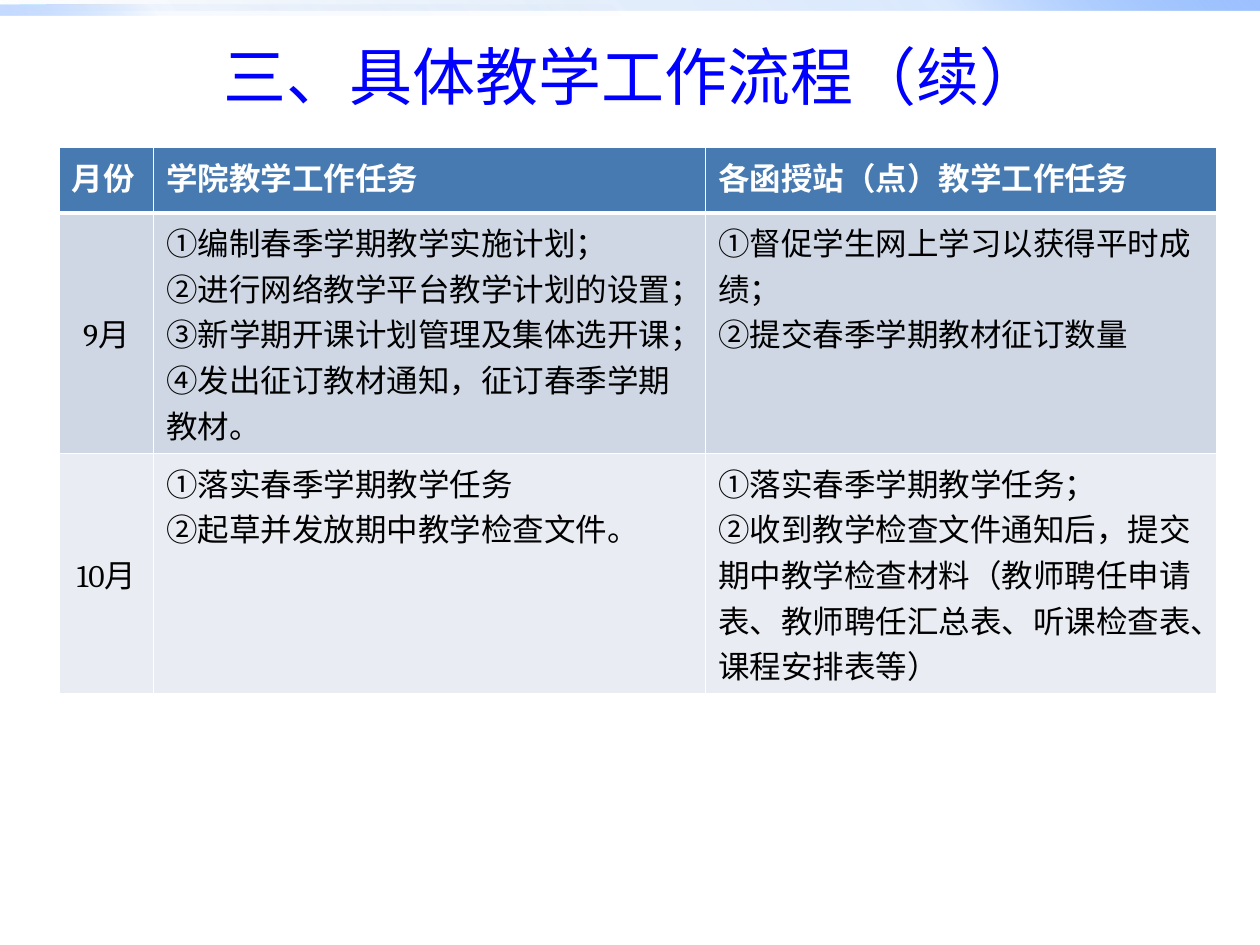
from dataclasses import dataclass

from lxml import etree
from pptx import Presentation, util as u
from pptx.dml.color import RGBColor
from pptx.enum import shapes, text
from pptx.oxml import ns


@dataclass(frozen=True)
class Theme:
    """Colours, fonts and sizes of the slide."""
    title: str = "0000FF"
    header: str = "477AB1"
    bands: tuple = ("CFD7E4", "E9ECF2")
    white: str = "FFFFFF"
    black: str = "000000"
    glow: tuple = ("0058B7", "4F95FF", "9EC2FF")
    sans: str = "Noto Sans CJK SC"
    serif: str = "Cambria"
    title_size: int = 36
    body_size: int = 18
    rule: int = 1
    header_rule: int = 3


THEME = Theme()
SANS, SERIF = THEME.sans, THEME.serif

HEADERS = ["月份", "学院教学工作任务", "各函授站（点）教学工作任务"]
MONTHS = [
    ("9月",
     [[(SANS, "①编制春季学期教学实施计划；")],
      [(SANS, "②进行网络教学平台教学计划的设置；")],
      [(SANS, "③新学期开课计划管理及集体选开课；")],
      [(SERIF, "④发出征订教材通知，征订春季学期教材。")]],
     [[(SANS, "①"), (SERIF, "督促学生网上学习以获得平时成绩"), (SANS, "；")],
      [(SANS, "②提交春季学期教材征订数量")]]),
    ("10月",
     [[(SANS, "①落实春季学期教学任务")],
      [(SANS, "②起草并发放期中教学检查文件。")]],
     [[(SANS, "①"), (SERIF, "落实春季学期教学任务；")],
      [(SANS, "②收到教学检查文件通知后，"),
       (SERIF, "提交期中教学检查材料（教师聘任申请表、教师聘任汇总表、"
               "听课检查表、课程安排表等）")]]),
]


def add_span(para, words, font, size, color, bold=False):
    """Add one formatted run to a paragraph."""
    span = para.add_run()
    span.text = words
    span.font.name = font
    span.font.size = u.Pt(size)
    span.font.bold = bold
    span.font.color.rgb = RGBColor.from_string(color)
    east = etree.SubElement(span.font._element, ns.qn("a:ea"))
    east.set("typeface", THEME.sans)


def add_bar(page, box, angle, alphas):
    """Draw a gradient strip whose stops have the given opacities in percent."""
    bar = page.shapes.add_shape(shapes.MSO_SHAPE.RECTANGLE, *map(u.Inches, box))
    bar.shadow.inherit = False
    bar.line.fill.background()
    bar.fill.gradient()
    gradient = bar.fill._xPr.find(ns.qn("a:gradFill"))
    stops = gradient.find(ns.qn("a:gsLst"))
    for stop in list(stops):
        stops.remove(stop)
    for place, color, alpha in zip((0, 75, 100), THEME.glow, alphas):
        stop = etree.SubElement(stops, ns.qn("a:gs"), pos=str(place * 1000))
        tint = etree.SubElement(stop, ns.qn("a:srgbClr"), val=color)
        etree.SubElement(tint, ns.qn("a:alpha"), val=str(alpha * 1000))
    gradient.find(ns.qn("a:lin")).set("ang", str(angle * 60000))


def place_title(page, box, words):
    """Move and format the title placeholder."""
    title = page.shapes.title
    title.left, title.top, title.width, title.height = map(u.Inches, box)
    title.text_frame.vertical_anchor = text.MSO_ANCHOR.MIDDLE
    para = title.text_frame.paragraphs[0]
    para.alignment = text.PP_ALIGN.CENTER
    add_span(para, words, THEME.sans, THEME.title_size, THEME.title)


def set_borders(cell, top, bottom):
    """Give a cell white borders of the given top and bottom widths."""
    properties = cell._tc.get_or_add_tcPr()
    widths = (("L", THEME.rule), ("R", THEME.rule), ("T", top), ("B", bottom))
    for index, (side, width) in enumerate(widths):
        line = etree.Element(ns.qn(f"a:ln{side}"), w=str(u.Pt(width)))
        fill = etree.SubElement(line, ns.qn("a:solidFill"))
        etree.SubElement(fill, ns.qn("a:srgbClr"), val=THEME.white)
        properties.insert(index, line)


def fill_cell(cell, paragraphs, row, centred=False):
    """Write a cell's paragraphs and style it for its row."""
    is_header = row == 0
    color = THEME.white if is_header else THEME.black
    for index, spans in enumerate(paragraphs):
        frame = cell.text_frame
        para = frame.add_paragraph() if index else frame.paragraphs[0]
        if centred:
            para.alignment = text.PP_ALIGN.CENTER
        for font, words in spans:
            add_span(para, words, font, THEME.body_size, color, is_header)
    if centred:
        cell.vertical_anchor = text.MSO_ANCHOR.MIDDLE
    cell.fill.solid()
    fill = THEME.header if is_header else THEME.bands[(row - 1) % 2]
    cell.fill.fore_color.rgb = RGBColor.from_string(fill)
    set_borders(cell,
                THEME.header_rule if row == 1 else THEME.rule,
                THEME.header_rule if is_header else THEME.rule)


def add_schedule(page, box, widths, header_height):
    """Build the monthly task table inside the box."""
    rows = len(MONTHS) + 1
    table = page.shapes.add_table(rows, len(widths), *map(u.Inches, box)).table
    for column, width in zip(table.columns, widths):
        column.width = u.Inches(width)
    month_height = (box[3] - header_height) / len(MONTHS)
    for index, row in enumerate(table.rows):
        row.height = u.Inches(month_height if index else header_height)
    for column, words in enumerate(HEADERS):
        fill_cell(table.cell(0, column), [[(SERIF, words)]], 0)
    for row, (month, college, stations) in enumerate(MONTHS, 1):
        fill_cell(table.cell(row, 0), [[(SERIF, month)]], row, centred=True)
        fill_cell(table.cell(row, 1), college, row)
        fill_cell(table.cell(row, 2), stations, row)


def main():
    """Build and save the deck."""
    deck = Presentation()
    deck.slide_width, deck.slide_height = u.Inches(10), u.Inches(7.5)
    page = deck.slides.add_slide(deck.slide_layouts[5])
    add_bar(page, (0, 0, 10, 0.08), 315, (0, 20, 100))
    add_bar(page, (0, 0.04, 5, 0.08), 135, (0, 5, 60))
    place_title(page, (0.55, 0.16, 8.95, 0.87), "三、具体教学工作流程（续）")
    add_schedule(page, (0.47, 1.17, 9.19, 4.04), (0.75, 4.38, 4.06), 0.52)
    deck.save("out.pptx")


if __name__ == "__main__":
    main()
